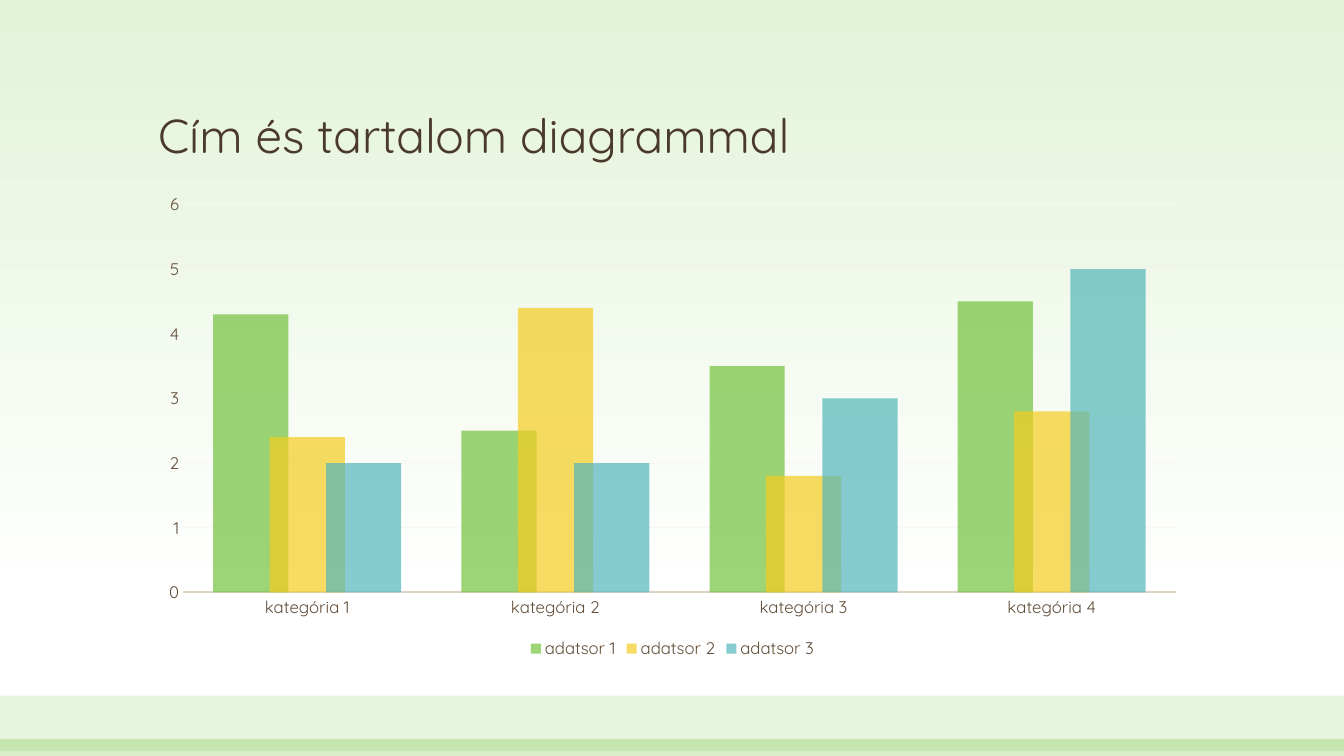
from pptx import Presentation
from pptx.chart.data import CategoryChartData
from pptx.dml.color import RGBColor
from pptx.enum.chart import XL_CHART_TYPE, XL_LEGEND_POSITION, XL_TICK_MARK
from pptx.enum.shapes import MSO_SHAPE
from pptx.enum.text import MSO_ANCHOR
from pptx.oxml.ns import qn
from pptx.util import Inches, Pt
from lxml import etree

COLUMNS = XL_CHART_TYPE.COLUMN_CLUSTERED
LEGEND_BOTTOM = XL_LEGEND_POSITION.BOTTOM
NO_TICK = XL_TICK_MARK.NONE
RECTANGLE = MSO_SHAPE.RECTANGLE
ANCHOR_BOTTOM = MSO_ANCHOR.BOTTOM

FONT = "Quicksand"
COLORS = {
    "sky": "E3F3D8",
    "white": "FFFFFF",
    "green": "72C23C",
    "yellow": "F4CC20",
    "teal": "53B6BB",
    "title": "4A3A2A",
    "label": "624D38",
    "axis": "DFD2C6",
    "grid": "F9F6F4",
}
CATEGORIES = [f"kategória {number}" for number in range(1, 5)]
SERIES = [
    ("adatsor 1", (4.3, 2.5, 3.5, 4.5), "green"),
    ("adatsor 2", (2.4, 4.4, 1.8, 2.8), "yellow"),
    ("adatsor 3", (2, 2, 3, 5), "teal"),
]


def rgb(name):
    return RGBColor.from_string(COLORS[name])


def set_fill(fill, color, opacity):
    """Solid fill with an opacity in percent."""
    fill.solid()
    fill.fore_color.rgb = rgb(color)
    element = fill._xPr.find(qn("a:solidFill")).find(qn("a:srgbClr"))
    etree.SubElement(element, qn("a:alpha")).set("val", str(opacity * 1000))


def set_font(font, size, color):
    font.name = FONT
    font.size = Pt(size)
    font.bold = False
    font.color.rgb = rgb(color)


def set_line(line, color, width):
    line.color.rgb = rgb(color)
    line.width = Pt(width)


def set_background(page):
    fill = page.background.fill
    fill.gradient()
    fill.gradient_angle = 270
    stops = (("sky", 0), ("white", 0.79))
    for stop, (color, position) in zip(fill.gradient_stops, stops):
        stop.color.rgb = rgb(color)
        stop.position = position


def add_band(page, top, height, opacity):
    band = page.shapes.add_shape(
        RECTANGLE, 0, Inches(top), Inches(13.33), Inches(height))
    band.shadow.inherit = False
    band.line.fill.background()
    set_fill(band.fill, "green", opacity)


def add_text(page, text, *, left, top, width, height, size, color, spacing):
    box = page.shapes.add_textbox(
        Inches(left), Inches(top), Inches(width), Inches(height))
    frame = box.text_frame
    frame.word_wrap = True
    frame.vertical_anchor = ANCHOR_BOTTOM
    para = frame.paragraphs[0]
    para.line_spacing = spacing
    span = para.add_run()
    span.text = text
    set_font(span.font, size, color)


def style_axis(axis):
    axis.major_tick_mark = NO_TICK
    axis.minor_tick_mark = NO_TICK
    set_font(axis.tick_labels.font, 12, "label")


def add_column_chart(page, left, top, width, height):
    data = CategoryChartData()
    data.categories = CATEGORIES
    for name, values, _ in SERIES:
        data.add_series(name, values)
    chart = page.shapes.add_chart(
        COLUMNS, Inches(left), Inches(top), Inches(width), Inches(height),
        data).chart
    chart.has_title = False
    set_font(chart.font, 10, "label")

    # Columns
    plot = chart.plots[0]
    plot.gap_width = 80
    plot.overlap = 25
    plot.vary_by_categories = False
    for series, (_, _, color) in zip(plot.series, SERIES):
        set_fill(series.format.fill, color, 70)

    # Axes
    style_axis(chart.category_axis)
    set_line(chart.category_axis.format.line, "axis", 1.25)
    scale = chart.value_axis
    style_axis(scale)
    scale.minimum_scale, scale.maximum_scale, scale.major_unit = 0, 6, 1
    scale.format.line.fill.background()
    scale.has_major_gridlines = True
    set_line(scale.major_gridlines.format.line, "grid", 0.75)

    # Legend
    chart.has_legend = True
    chart.legend.position = LEGEND_BOTTOM
    chart.legend.include_in_layout = False
    set_font(chart.legend.font, 12, "label")


def main():
    deck = Presentation()
    deck.slide_width = Inches(13.33)
    deck.slide_height = Inches(7.5)
    page = deck.slides.add_slide(deck.slide_layouts[6])

    # Background and footer bands
    set_background(page)
    add_band(page, 6.9, 0.55, 17)
    add_band(page, 7.33, 0.17, 28)

    # Title and chart
    add_text(page, "Cím és tartalom diagrammal", left=1.47, top=0.48,
             width=10.4, height=1.19, size=34, color="title", spacing=0.9)
    add_column_chart(page, 1.47, 1.83, 10.4, 4.75)

    deck.save("out.pptx")


if __name__ == "__main__":
    main()
